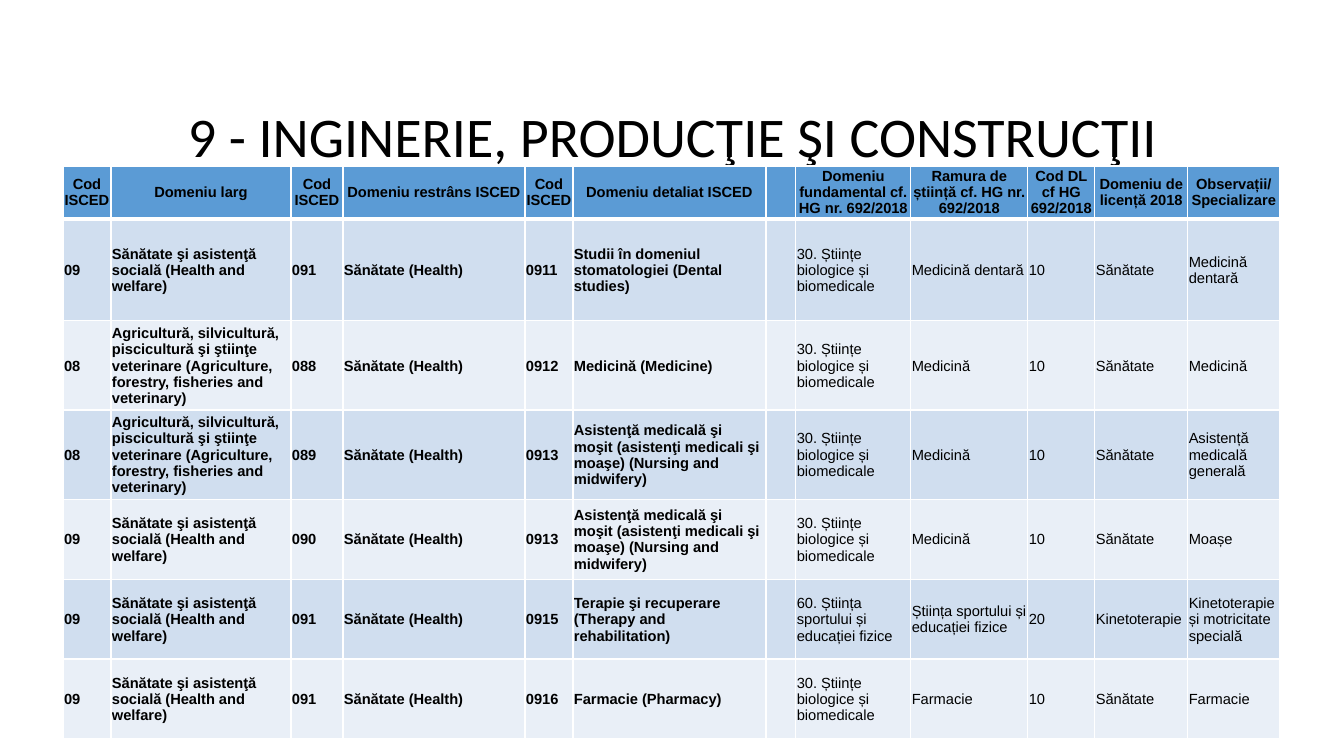
from lxml.etree import SubElement
from pptx import Presentation
from pptx.dml.color import RGBColor
from pptx.enum.text import MSO_ANCHOR as Anchor, PP_ALIGN as Align
from pptx.oxml.ns import qn
from pptx.util import Pt

PX = 9144000 / 1008  # EMU in one px, at 100.8 px to the inch

BLACK = RGBColor(0x00, 0x00, 0x00)
WHITE = RGBColor(0xFF, 0xFF, 0xFF)
HEADER_BLUE = RGBColor(0x5B, 0x9B, 0xD5)
BAND_DARK = RGBColor(0xD0, 0xDE, 0xEF)
BAND_LIGHT = RGBColor(0xE9, 0xEF, 0xF7)

TITLE = "9 - INGINERIE, PRODUCŢIE ŞI CONSTRUCŢII"

# Table content
HEALTH_WELFARE = "Sănătate şi asistenţă socială (Health and welfare)"
AGRICULTURE = ("Agricultură, silvicultură, piscicultură şi ştiinţe veterinare "
               "(Agriculture, forestry, fisheries and veterinary)")
HEALTH = "Sănătate (Health)"
NURSING = ("Asistenţă medicală şi moşit (asistenţi medicali şi moaşe) "
           "(Nursing and midwifery)")
BIOMEDICAL = "30. Științe biologice și biomedicale"
SPORT = "Știința sportului și educației fizice"

HEADERS = ["Cod ISCED", "Domeniu larg", "Cod ISCED", "Domeniu restrâns ISCED",
           "Cod ISCED", "Domeniu detaliat ISCED", "",
           "Domeniu fundamental cf. HG nr. 692/2018",
           "Ramura de știință cf. HG nr. 692/2018", "Cod DL cf HG 692/2018",
           "Domeniu de licență 2018", "Observații/ Specializare"]
ROWS = [
    ["09", HEALTH_WELFARE, "091", HEALTH, "0911",
     "Studii în domeniul stomatologiei (Dental studies)", "",
     BIOMEDICAL, "Medicină dentară", "10", "Sănătate", "Medicină dentară"],
    ["08", AGRICULTURE, "088", HEALTH, "0912", "Medicină (Medicine)", "",
     BIOMEDICAL, "Medicină", "10", "Sănătate", "Medicină"],
    ["08", AGRICULTURE, "089", HEALTH, "0913", NURSING, "",
     BIOMEDICAL, "Medicină", "10", "Sănătate", "Asistență medicală generală"],
    ["09", HEALTH_WELFARE, "090", HEALTH, "0913", NURSING, "",
     BIOMEDICAL, "Medicină", "10", "Sănătate", "Moașe"],
    ["09", HEALTH_WELFARE, "091", HEALTH, "0915",
     "Terapie şi recuperare (Therapy and rehabilitation)", "",
     "60. " + SPORT, SPORT, "20", "Kinetoterapie",
     "Kinetoterapie și motricitate specială"],
    ["09", HEALTH_WELFARE, "091", HEALTH, "0916", "Farmacie (Pharmacy)", "",
     BIOMEDICAL, "Farmacie", "10", "Sănătate", "Farmacie"],
]
COLUMN_WIDTHS = [48, 180, 52, 182, 48, 193, 30, 115, 117, 67, 93, 92]
ROW_HEIGHTS = [49, 102, 58, 80, 80, 80, 80]
BOLD_COLUMNS = 6  # the ISCED columns on the left


def px(length):
    return round(length * PX)


def set_font(para, name, size, bold=False):
    para.font.name = name
    para.font.size = Pt(size)
    para.font.bold = bold
    para.font.color.rgb = BLACK


def add_title(page, left, top, width, height):
    box = page.shapes.add_textbox(px(left), px(top), px(width), px(height))
    frame = box.text_frame
    frame.word_wrap = True
    frame.vertical_anchor = Anchor.MIDDLE
    para = frame.paragraphs[0]
    para.text = TITLE
    para.alignment = Align.CENTER
    para.line_spacing = 0.9
    set_font(para, "Calibri", 40)


def add_borders(cell, top, bottom):
    properties = cell._tc.get_or_add_tcPr()
    for side, points in (("L", 1), ("R", 1), ("T", top), ("B", bottom)):
        line = SubElement(properties, qn(f"a:ln{side}"), w=str(Pt(points)))
        fill = SubElement(line, qn("a:solidFill"))
        SubElement(fill, qn("a:srgbClr"), val=str(WHITE))


def fill_cell(cell, text, row, column):
    is_header = row == 0
    # Borders go in ahead of the fill; the line under the header is thicker
    add_borders(cell, top=3 if row == 1 else 1, bottom=3 if is_header else 1)
    cell.fill.solid()
    if is_header:
        cell.fill.fore_color.rgb = HEADER_BLUE
    else:
        cell.fill.fore_color.rgb = BAND_DARK if row % 2 else BAND_LIGHT

    cell.vertical_anchor = Anchor.MIDDLE
    cell.margin_left = cell.margin_right = cell.margin_top = px(0 if is_header else 1)
    cell.margin_bottom = 0
    para = cell.text_frame.paragraphs[0]
    if text:
        para.text = text
    para.alignment = Align.CENTER if is_header else Align.LEFT
    set_font(para, "Arial", 10.5, bold=is_header or column < BOLD_COLUMNS)


def add_domain_table(page, left, top):
    table = page.shapes.add_table(
        len(ROW_HEIGHTS), len(COLUMN_WIDTHS), px(left), px(top),
        px(sum(COLUMN_WIDTHS)), px(sum(ROW_HEIGHTS))).table
    for column, width in zip(table.columns, COLUMN_WIDTHS):
        column.width = px(width)
    for row, height in zip(table.rows, ROW_HEIGHTS):
        row.height = px(height)
    for row, texts in enumerate([HEADERS] + ROWS):
        for column, text in enumerate(texts):
            fill_cell(table.cell(row, column), text, row, column)


def main():
    deck = Presentation()
    deck.slide_width, deck.slide_height = px(1344), px(756)
    page = deck.slides.add_slide(deck.slide_layouts[6])
    add_title(page, 93, 66, 1159, 146)
    add_domain_table(page, 63, 166)
    deck.save("out.pptx")


if __name__ == "__main__":
    main()
